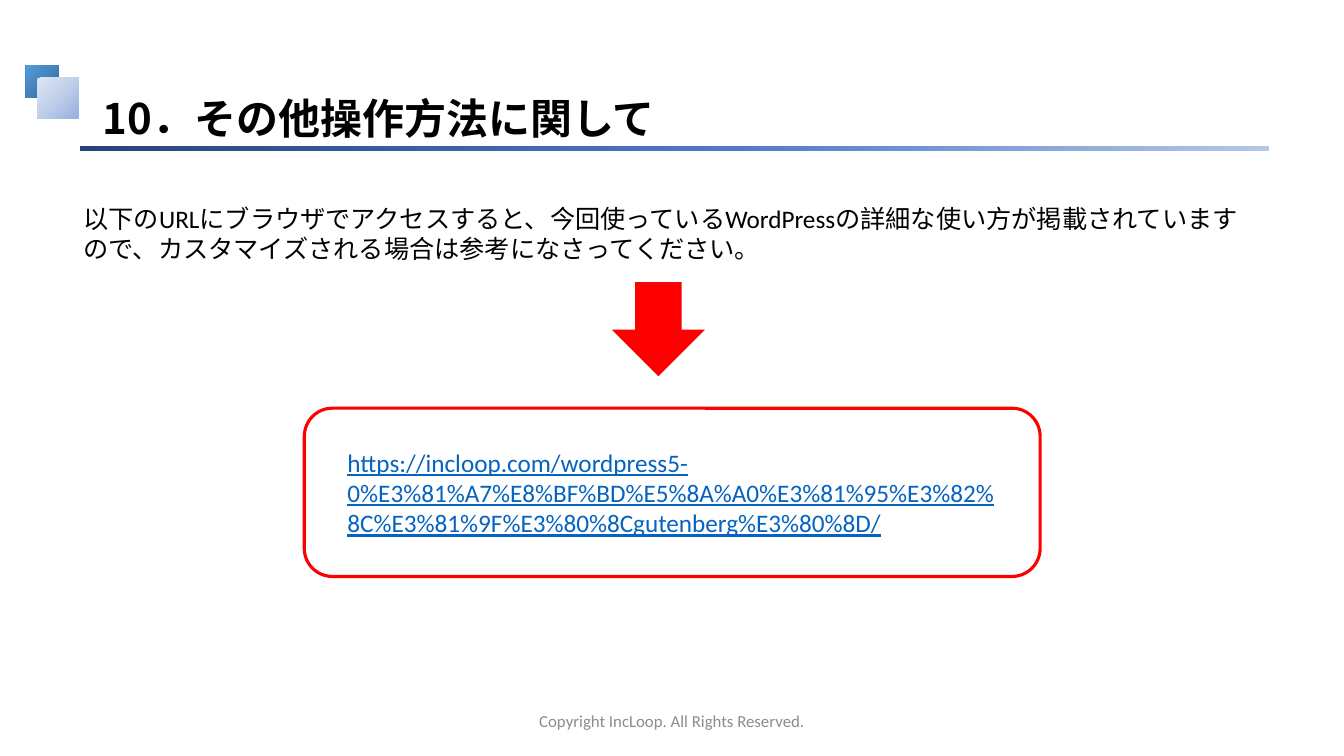
from dataclasses import dataclass

from lxml.etree import SubElement
from pptx import Presentation
from pptx.dml.color import RGBColor
from pptx.enum.shapes import MSO_SHAPE as Shape
from pptx.enum.text import MSO_ANCHOR as Anchor, MSO_AUTO_SIZE as AutoSize, PP_ALIGN as Align
from pptx.oxml.ns import qn
from pptx.util import Pt

TITLE = "10．その他操作方法に関して"
INTRO = (
    "以下のURLにブラウザでアクセスすると、今回使っているWordPressの詳細な使い方が"
    "掲載されていますので、カスタマイズされる場合は参考になさってください。"
)
GUIDE_URL = (
    "https://incloop.com/wordpress5-0%E3%81%A7%E8%BF%BD%E5%8A%A0%E3%81%95"
    "%E3%82%8C%E3%81%9F%E3%80%8Cgutenberg%E3%80%8D/"
)
COPYRIGHT = "Copyright IncLoop. All Rights Reserved."


@dataclass(frozen=True)
class Theme:
    heading_font: str = "Noto Sans CJK JP"
    body_font: str = "Calibri"
    heading_size: int = 30
    body_size: int = 18
    footer_size: int = 12
    text: str = "000000"
    muted: str = "8C8C8C"
    link: str = "0563C1"
    accent: str = "FF0000"
    dark_square: tuple = ((0, "305C84"), (50, "4583BB"), (100, "529BDE"))
    light_square: tuple = ((0, "94B1E1"), (50, "BFCEEA"), (100, "E0E7F4"))
    rule: tuple = ((0, "B4C7E7"), (46, "4D79C7"), (100, "264478"))


THEME = Theme()

DECORATIONS = [
    ((18.6, 46.8, 23.2, 23.2), THEME.dark_square, 225),
    ((26.7, 55.4, 29.6, 29.6), THEME.light_square, None),
    ((57.2, 104.6, 849.4, 3.6), THEME.rule, 180),
]


def add_shape(slide, kind, box):
    shape = slide.shapes.add_shape(kind, *map(Pt, box))
    shape.shadow.inherit = False
    shape.fill.background()
    shape.line.fill.background()
    return shape


def fill_solid(shape, color):
    shape.fill.solid()
    shape.fill.fore_color.rgb = RGBColor.from_string(color)


def fill_gradient(shape, stops, angle):
    shape.fill.gradient()
    gradient = shape.fill._fill._gradFill
    for child in list(gradient):
        gradient.remove(child)
    stop_list = SubElement(gradient, qn("a:gsLst"))
    for position, color in stops:
        stop = SubElement(stop_list, qn("a:gs"), pos=str(position * 1000))
        SubElement(stop, qn("a:srgbClr"), val=color)
    if angle is None:
        radial = SubElement(gradient, qn("a:path"))
        radial.set("path", "circle")
        SubElement(radial, qn("a:fillToRect"), l="100000", t="100000")
    else:
        SubElement(gradient, qn("a:lin"), ang=str(angle * 60000), scaled="0")


def write(shape, text, size, color, font=THEME.body_font, align=Align.LEFT,
          anchor=Anchor.TOP, bold=False, underline=False):
    frame = shape.text_frame
    frame.text = text
    frame.word_wrap = True
    frame.auto_size = AutoSize.NONE
    frame.vertical_anchor = anchor
    paragraph = frame.paragraphs[0]
    paragraph.alignment = align
    run = paragraph.runs[0]
    run.font.name = font
    run.font.size = Pt(size)
    run.font.bold = bold
    run.font.underline = underline
    run.font.color.rgb = RGBColor.from_string(color)
    return paragraph


def add_title(slide):
    title = slide.shapes.title
    title.left, title.top, title.width, title.height = map(Pt, (66.2, 49, 857.5, 51.8))
    paragraph = write(title, TITLE, THEME.heading_size, THEME.text,
                      font=THEME.heading_font, anchor=Anchor.MIDDLE, bold=True)
    paragraph.line_spacing = 1.5
    SubElement(paragraph.runs[0].font._element, qn("a:ea"), typeface=THEME.heading_font)


def add_link_frame(slide):
    frame = add_shape(slide, Shape.ROUNDED_RECTANGLE, (217.4, 291.6, 525.6, 120.2))
    frame.line.color.rgb = RGBColor.from_string(THEME.accent)
    frame.line.width = Pt(2.25)
    frame.text_frame.margin_left = Pt(25)
    frame.text_frame.margin_right = Pt(23)
    write(frame, GUIDE_URL, THEME.body_size, THEME.link, anchor=Anchor.MIDDLE, underline=True)


def main():
    presentation = Presentation()
    presentation.slide_width, presentation.slide_height = Pt(960), Pt(540)
    slide = presentation.slides.add_slide(presentation.slide_layouts.get_by_name("Title Only"))

    for box, stops, angle in DECORATIONS:
        fill_gradient(add_shape(slide, Shape.RECTANGLE, box), stops, angle)
    add_title(slide)

    intro = slide.shapes.add_textbox(*map(Pt, (52.6, 141.8, 841.7, 51)))
    write(intro, INTRO, THEME.body_size, THEME.text)

    arrow = add_shape(slide, Shape.DOWN_ARROW, (437, 201.6, 66.6, 67.2))
    fill_solid(arrow, THEME.accent)
    add_link_frame(slide)

    footer = slide.shapes.add_textbox(*map(Pt, (318, 500.4, 324, 28.8)))
    write(footer, COPYRIGHT, THEME.footer_size, THEME.muted,
          align=Align.CENTER, anchor=Anchor.MIDDLE)

    presentation.save("out.pptx")


if __name__ == "__main__":
    main()
